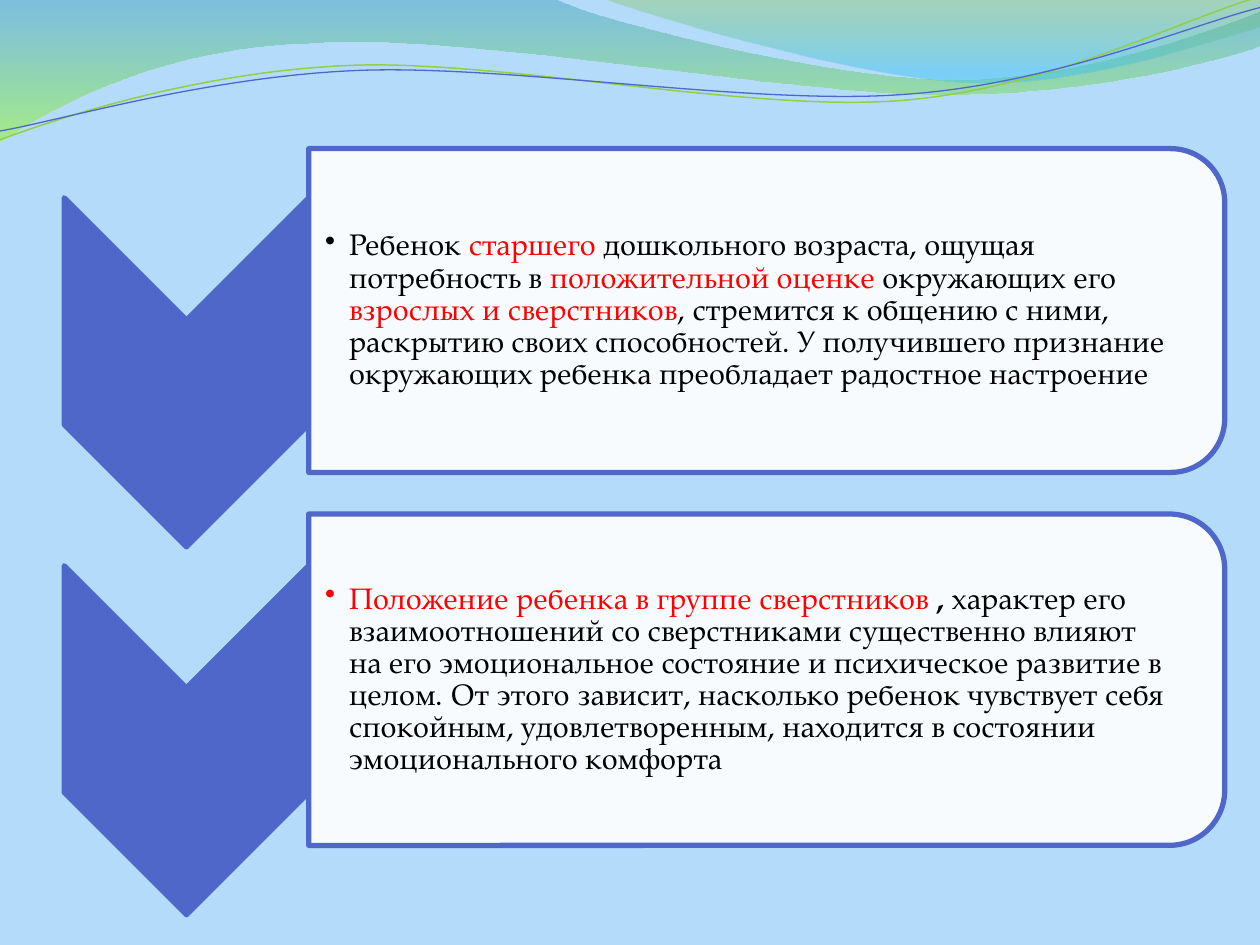
import pptx
import pptx.dml.color
import pptx.enum.shapes
import pptx.enum.text
import pptx.oxml.ns
import pptx.util
from lxml import etree

COLORS = {
    "sky": "B4DCFA", "blue": "4E67C8", "white": "FFFFFF", "black": "000000",
    "red": "FF0000", "lime": "93CE48",
}
FONT = "TeX Gyre Pagella"
NBSP = chr(160)

# Each block: height of its panel, then runs of (text, colour, bold)
BLOCKS = [
    (2.57, [
        ("Ребенок ", "black", False),
        ("старшего ", "red", False),
        ("дошкольного возраста, ощущая потребность в ", "black", False),
        ("положительной оценке ", "red", False),
        ("окружающих его ", "black", False),
        ("взрослых и сверстников", "red", False),
        (", стремится к общению с ними, раскрытию своих способностей. "
         "У получившего признание окружающих ребенка преобладает "
         "радостное настроение", "black", False),
    ]),
    (2.63, [
        ("Положение ребенка в группе сверстников ", "red", False),
        (", ", "black", True),
        (f"характер его взаимоотношений со сверстниками существенно{NBSP}влияют "
         f"на{NBSP}его эмоциональное состояние и психическое развитие в целом. "
         "От этого зависит, насколько ребенок чувствует себя спокойным, "
         "удовлетворенным, находится в состоянии эмоционального комфорта",
         "black", False),
    ]),
]

# Waves: a point is a corner, six numbers are a Bezier curve.
# Gradient stops are (position, colour, opacity in percent).
WAVES = [
    ([(0, 0), (4.4, -0.01), (4.76, 0.17, 6.64, 0.63, 7.58, 0.63),
      (8.53, 0.63, 9.58, 0.26, 10, 0.09), (10.01, 0.36),
      (9.83, 0.44, 8.7, 0.76, 7.46, 0.75), (6.22, 0.75, 3.82, 0.28, 2.57, 0.34),
      (1.29, 0.36, 0.46, 0.83, -0.01, 1.13)],
     [(0, "3B9CBF", 45), (1, "9CFA24", 55)]),
    ([(4.79, -0.01), (5.09, 0.11, 6.82, 0.62, 7.69, 0.65),
      (8.56, 0.69, 9.61, 0.32, 10, 0.21), (10, 0)],
     [(0, "7EBE2C", 30), (0.8, "39C1F1", 45)]),
]
STRANDS = [
    ([(0, 1.11), (0.48, 0.93, 1.58, 0.57, 2.77, 0.52),
      (3.95, 0.47, 5.93, 0.89, 7.13, 0.8), (8.33, 0.71, 9.38, 0.15, 9.98, -0.02)],
     "lime", 0.85),
    ([(0, 1.04), (0.47, 0.96, 1.64, 0.61, 2.83, 0.56),
      (4.03, 0.51, 5.97, 0.84, 7.17, 0.75), (8.36, 0.67, 9.41, 0.21, 10, 0.06)],
     "blue", 0.75),
]

# Layout, in inches
PANEL_LEFT, PANEL_WIDTH, PANEL_TOP, PANEL_GAP = 2.45, 7.27, 1.18, 0.33
TEXT_WIDTH = 7.15
CHEVRON_LENGTH, CHEVRON_WIDTH = 2.77, 1.94
CHEVRON_LEFT, CHEVRON_TOP, CHEVRON_STEP = 0.51, 1.57, 2.92

MSO = pptx.enum.shapes.MSO_SHAPE
qn = pptx.oxml.ns.qn


def inch(v):
    return pptx.util.Cm(2.54 * v)


def rgb(name):
    return pptx.dml.color.RGBColor.from_string(COLORS.get(name, name))


def set_opacity(color_el, percent):
    etree.SubElement(color_el, qn("a:alpha")).set("val", str(percent * 1000))


def set_line(s, color, width):
    s.line.color.rgb = rgb(color)
    s.line.width = pptx.util.Pt(width)
    etree.SubElement(s.line._get_or_add_ln(), qn("a:round"))


def add_curve(shapes, parts, close):
    """Build an outline from all points, then join control points into curves."""
    points = [(inch(part[i]), inch(part[i + 1]))
              for part in parts for i in range(0, len(part), 2)]
    builder = shapes.build_freeform(*points[0])
    builder.add_line_segments(points[1:], close=close)
    s = builder.convert_to_shape()
    s.shadow.inherit = False
    segments = iter(list(s._element.spPr.iter(qn("a:lnTo"))))
    for part in parts[1:]:
        first = next(segments)
        if len(part) == 6:
            first.tag = qn("a:cubicBezTo")
            for _ in range(2):
                segment = next(segments)
                first.append(segment[0])
                segment.getparent().remove(segment)
    return s


def add_turned(shapes, kind, left, top, width, height, fill):
    """Add a shape turned by 90 degrees that covers the given box."""
    cx, cy = left + width / 2, top + height / 2
    s = shapes.add_shape(kind, inch(cx - height / 2), inch(cy - width / 2),
                         inch(height), inch(width))
    s.rotation = 90
    s.shadow.inherit = False
    s.fill.solid()
    s.fill.fore_color.rgb = rgb(fill)
    set_line(s, "blue", 3)
    return s


def add_bullet_text(shapes, left, top, width, height, runs):
    tf = shapes.add_textbox(inch(left), inch(top), inch(width), inch(height)).text_frame
    tf.word_wrap = True
    tf.vertical_anchor = pptx.enum.text.MSO_ANCHOR.MIDDLE
    tf.margin_left = inch(0.13)
    tf.margin_top = tf.margin_right = tf.margin_bottom = inch(0.01)
    p = tf.paragraphs[0]
    p.level = 1
    p.line_spacing = 0.9
    p.space_after = pptx.util.Pt(2.5)
    pPr = p._p.get_or_add_pPr()
    pPr.set("marL", str(inch(0.19)))
    pPr.set("indent", str(-inch(0.19)))
    etree.SubElement(pPr, qn("a:buChar")).set("char", "••")
    for text, color, bold in runs:
        r = p.add_run()
        r.text = text
        r.font.name = FONT
        r.font.size = pptx.util.Pt(17)
        r.font.bold = bold
        r.font.color.rgb = rgb(color)


def main():
    prs = pptx.Presentation()
    prs.slide_width, prs.slide_height = inch(10), inch(7.5)
    slide = prs.slides.add_slide(prs.slide_layouts[6])
    slide.background.fill.solid()
    slide.background.fill.fore_color.rgb = rgb("sky")
    shapes = slide.shapes

    # Waves and strands along the top
    for parts, stops in WAVES:
        s = add_curve(shapes, parts, True)
        s.line.fill.background()
        s.fill.gradient()
        s.fill.gradient_angle = 270
        for stop, (position, color, _) in zip(s.fill.gradient_stops, stops):
            stop.position = position
            stop.color.rgb = rgb(color)
        for el, (_, _, opacity) in zip(s._element.spPr.iter(qn("a:srgbClr")), stops):
            set_opacity(el, opacity)
    for parts, color, width in STRANDS:
        s = add_curve(shapes, parts, False)
        s.fill.background()
        set_line(s, color, width)

    # Chevrons with their text panels
    top = PANEL_TOP
    inset = PANEL_WIDTH - TEXT_WIDTH
    for i, (height, runs) in enumerate(BLOCKS):
        add_turned(shapes, MSO.CHEVRON, CHEVRON_LEFT, CHEVRON_TOP + i * CHEVRON_STEP,
                   CHEVRON_WIDTH, CHEVRON_LENGTH, "blue")
        panel = add_turned(shapes, MSO.ROUND_2_SAME_RECTANGLE, PANEL_LEFT, top,
                           PANEL_WIDTH, height, "white")
        set_opacity(panel._element.spPr.find(qn("a:solidFill"))[0], 90)
        add_bullet_text(shapes, PANEL_LEFT, top + inset, TEXT_WIDTH,
                        height - 2 * inset, runs)
        top += height + PANEL_GAP

    prs.save("out.pptx")


if __name__ == "__main__":
    main()
